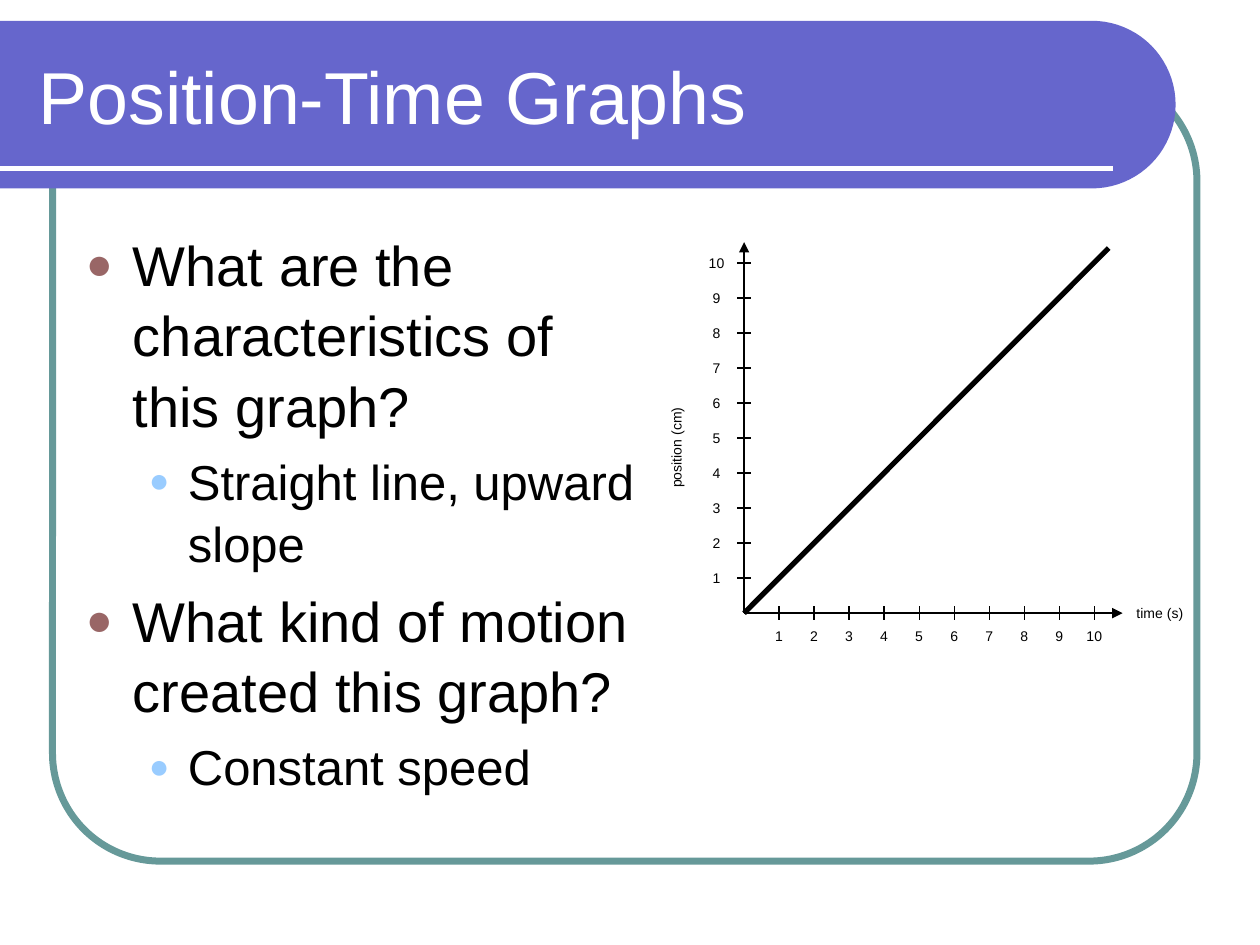
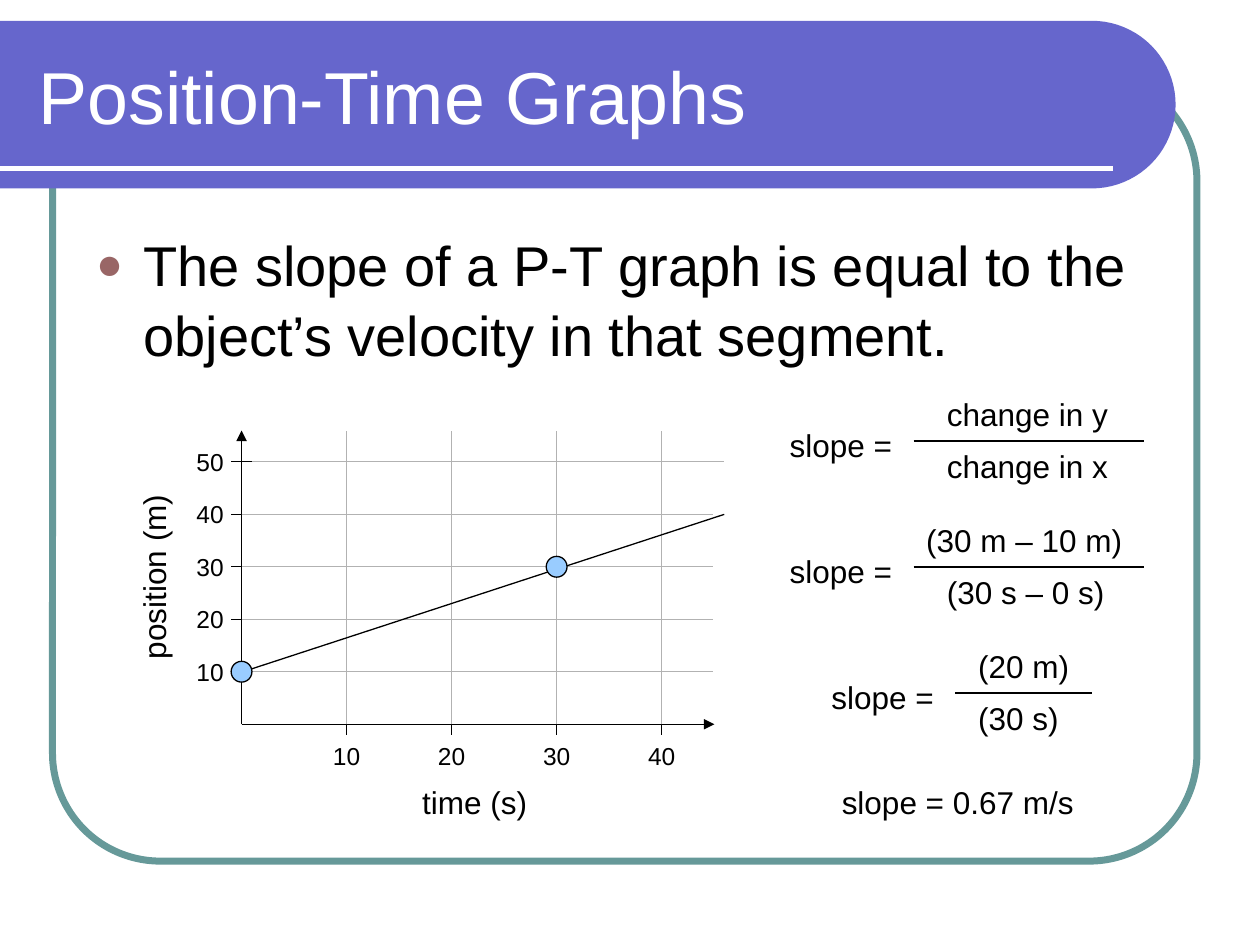
from math import cos, pi, sin

from lxml import etree
from pptx import Presentation
from pptx.dml.color import RGBColor
from pptx.enum.shapes import MSO_CONNECTOR, MSO_SHAPE
from pptx.enum.text import MSO_ANCHOR, PP_ALIGN
from pptx.oxml.ns import qn
from pptx.util import Cm, Pt

STRAIGHT = MSO_CONNECTOR.STRAIGHT
ROUND_RECT, OVAL = MSO_SHAPE.ROUNDED_RECTANGLE, MSO_SHAPE.OVAL
MIDDLE, TOP = MSO_ANCHOR.MIDDLE, MSO_ANCHOR.TOP
LEFT, CENTER = PP_ALIGN.LEFT, PP_ALIGN.CENTER

COLORS = {
    "text": "000000", "white": "FFFFFF", "band": "6666CC", "frame": "669999",
    "bullet": "996666", "sub_bullet": "99CCFF", "grid": "B2B2B2", "point": "99CCFF",
}
FONT = "Arial"
TITLE = "Position-Time Graphs"
LEVELS = [
    {"size": 32, "margin": 0.95, "hang": 0.95, "color": "bullet", "scale": 80},
    {"size": 28, "margin": 2.06, "hang": 0.79, "color": "sub_bullet", "scale": 70},
]

QUESTIONS = [
    (0, "What are the characteristics of this graph?"),
    (1, "Straight line, upward slope"),
    (0, "What kind of motion created this graph?"),
    (1, "Constant speed"),
]
SLOPE_RULE = [
    (0, "The slope of a P-T graph is equal to the object’s velocity in that segment."),
]

CM_GRAPH = {
    "origin": (15.0, 12.36), "x_end": 22.63, "y_end": 4.88, "tick": 0.28,
    "x_labels": range(1, 11), "x_span": 7.06, "y_labels": range(1, 11), "y_span": 7.06,
    "label_box": (0.85, 0.58), "x_gap": 0.16, "y_gap": 0.13, "label_size": 8,
    "title_size": 8,
    "x_title": ("time (s)", 22.66, 12.06, 2.11, 0.58),
    "y_title": ("position (cm)", 12.22, 8.36, 2.84, 0.61),
}
M_GRAPH = {
    "origin": (4.87, 14.6), "x_end": 14.4, "y_end": 8.68, "tick": 0.42,
    "x_labels": range(10, 50, 10), "x_span": 8.47,
    "y_labels": range(10, 60, 10), "y_span": 5.29,
    "label_box": (1.27, 0.85), "x_gap": 0.21, "y_gap": 0, "label_size": 14,
    "title_size": 18,
    "x_title": ("time (s)", 8.26, 15.67, 2.75, 1.02),
    "y_title": ("position (m)", 1.09, 11.02, 4.02, 1.02),
}
POINTS = [(0, 10), (30, 30)]
POINT_SIZE = 0.42

FRACTIONS = [
    {"left": 15.67, "bar": (18.42, 23.07),
     "top": ("change in y", 18.84), "bottom": ("change in x", 18.84)},
    {"left": 15.67, "bar": (18.42, 23.07),
     "top": ("(30 m – 10 m)", 18.42), "bottom": ("(30 s – 0 s)", 18.84)},
    {"left": 16.51, "bar": (19.26, 22.01),
     "top": ("(20 m)", 19.47), "bottom": ("(30 s)", 19.47)},
]
FIRST_BAR, BAR_STEP = 8.89, 2.54


def rgb(name):
    return RGBColor.from_string(COLORS[name])


def set_all(target, values):
    for name, value in values.items():
        setattr(target, name, value)


def add_run(p, text, size, color="text"):
    r = p.add_run()
    r.text = text
    set_all(r.font, {"name": FONT, "size": Pt(size)})
    r.font.color.rgb = rgb(color)


def add_text(s, text, x, y, w, h, size, color="text", align=LEFT, anchor=TOP, rotation=0):
    sp = s.shapes.add_textbox(Cm(x), Cm(y), Cm(w), Cm(h))
    sp.rotation = rotation
    tf = sp.text_frame
    set_all(tf, {"word_wrap": True, "vertical_anchor": anchor})
    p = tf.paragraphs[0]
    p.alignment = align
    add_run(p, text, size, color)


def add_line(s, x1, y1, x2, y2, color="text", width=0.75, arrow=False):
    line = s.shapes.add_connector(STRAIGHT, Cm(x1), Cm(y1), Cm(x2), Cm(y2))
    line.line.color.rgb = rgb(color)
    line.line.width = Pt(width)
    if arrow:
        etree.SubElement(line.line._ln, qn("a:tailEnd"), type="triangle")
    etree.SubElement(line._element.spPr, qn("a:effectLst"))


def add_bullets(s, items, x, y, w, h):
    tf = s.shapes.add_textbox(Cm(x), Cm(y), Cm(w), Cm(h)).text_frame
    tf.word_wrap = True
    for i, (level, text) in enumerate(items):
        style = LEVELS[level]
        p = tf.add_paragraph() if i else tf.paragraphs[0]
        set_all(p, {"level": level, "line_spacing": 1.05,
                    "space_before": Pt(0.2 * style["size"])})
        pPr = p._p.get_or_add_pPr()
        pPr.set("marL", str(Cm(style["margin"])))
        pPr.set("indent", str(-Cm(style["hang"])))
        color = etree.SubElement(pPr, qn("a:buClr"))
        etree.SubElement(color, qn("a:srgbClr"), val=COLORS[style["color"]])
        etree.SubElement(pPr, qn("a:buSzPct"), val=str(style["scale"] * 1000))
        etree.SubElement(pPr, qn("a:buFont"), typeface=FONT)
        etree.SubElement(pPr, qn("a:buChar"), char="●")
        add_run(p, text, style["size"])


def add_base(prs):
    s = prs.slides.add_slide(prs.slide_layouts[6])
    frame = s.shapes.add_shape(ROUND_RECT, Cm(1.06), Cm(1.48), Cm(23.07), Cm(15.88))
    frame.adjustments[0] = 0.137
    frame.shadow.inherit = False
    frame.fill.background()
    frame.line.color.rgb = rgb("frame")
    frame.line.width = Pt(4)

    top, radius, center = 0.42, 1.69, 22.01
    angles = [pi * (i / 40 - 0.5) for i in range(41)]
    arc = [(Cm(center + radius * cos(a)), Cm(top + radius + radius * sin(a))) for a in angles]
    outline = s.shapes.build_freeform(0, Cm(top))
    outline.add_line_segments(arc + [(0, Cm(top + 2 * radius))], close=True)
    band = outline.convert_to_shape()
    band.shadow.inherit = False
    band.fill.solid()
    band.fill.fore_color.rgb = rgb("band")
    band.line.fill.background()

    add_line(s, 0, 3.39, 22.44, 3.39, "white", 3)
    add_text(s, TITLE, 0.53, 0.64, 22.28, 2.54, 42, "white", anchor=MIDDLE)
    return s


def tick_places(graph):
    x0, y0 = graph["origin"]
    xs, ys = graph["x_labels"], graph["y_labels"]
    return ([x0 + graph["x_span"] * n / xs[-1] for n in xs],
            [y0 - graph["y_span"] * n / ys[-1] for n in ys])


def add_axes(s, graph):
    x0, y0 = graph["origin"]
    half = graph["tick"] / 2
    w, h = graph["label_box"]
    size = graph["label_size"]
    xs, ys = tick_places(graph)
    add_line(s, x0, y0, x0, graph["y_end"], arrow=True)
    add_line(s, x0, y0, graph["x_end"], y0, arrow=True)
    for n, x in zip(graph["x_labels"], xs):
        add_line(s, x, y0 - half, x, y0 + half)
        add_text(s, str(n), x - w / 2, y0 + graph["x_gap"], w, h, size, align=CENTER)
    for n, y in zip(graph["y_labels"], ys):
        add_line(s, x0 - half, y, x0 + half, y)
        add_text(s, str(n), x0 - graph["y_gap"] - w, y - h / 2, w, h, size, align=CENTER)
    add_text(s, *graph["x_title"], graph["title_size"])
    add_text(s, *graph["y_title"], graph["title_size"], rotation=270)


def add_grid(s, graph):
    x0, y0 = graph["origin"]
    xs, ys = tick_places(graph)
    for x in xs:
        add_line(s, x, y0, x, graph["y_end"], "grid")
    for y in ys:
        shift = 0.22 if y == ys[-1] else 0
        add_line(s, x0 + shift, y, x0 + 9.51 + shift, y, "grid")


def add_points(s, graph):
    x0, y0 = graph["origin"]
    for time, position in POINTS:
        x = x0 + graph["x_span"] * time / graph["x_labels"][-1]
        y = y0 - graph["y_span"] * position / graph["y_labels"][-1]
        dot = s.shapes.add_shape(OVAL, Cm(x - POINT_SIZE / 2), Cm(y - POINT_SIZE / 2),
                                 Cm(POINT_SIZE), Cm(POINT_SIZE))
        dot.shadow.inherit = False
        dot.fill.solid()
        dot.fill.fore_color.rgb = rgb("point")
        dot.line.color.rgb = rgb("text")
        dot.line.width = Pt(0.75)


def add_fractions(s):
    for i, part in enumerate(FRACTIONS):
        y = FIRST_BAR + i * BAR_STEP
        start, end = part["bar"]
        add_text(s, "slope =", part["left"], y - 0.43, 3.39, 1.02, 18)
        add_line(s, start, y, end, y)
        for (text, x), top in ((part["top"], y - 1.06), (part["bottom"], y)):
            add_text(s, text, x, top, end - start + 0.2, 1.02, 18)


def main():
    prs = Presentation()
    set_all(prs, {"slide_width": Cm(25.4), "slide_height": Cm(19.05)})

    s = add_base(prs)
    add_bullets(s, QUESTIONS, 1.48, 4.45, 11.85, 12.28)
    add_axes(s, CM_GRAPH)
    add_line(s, *CM_GRAPH["origin"], 22.35, 5.0, width=3)

    s = add_base(prs)
    add_bullets(s, SLOPE_RULE, 1.69, 4.45, 22.01, 12.28)
    add_axes(s, M_GRAPH)
    add_grid(s, M_GRAPH)
    add_line(s, 4.87, 13.55, 14.6, 10.37)
    add_points(s, M_GRAPH)
    add_fractions(s)
    add_text(s, "slope = 0.67 m/s", 16.72, 15.67, 5.5, 1.02, 18)

    prs.save("out.pptx")


if __name__ == "__main__":
    main()
